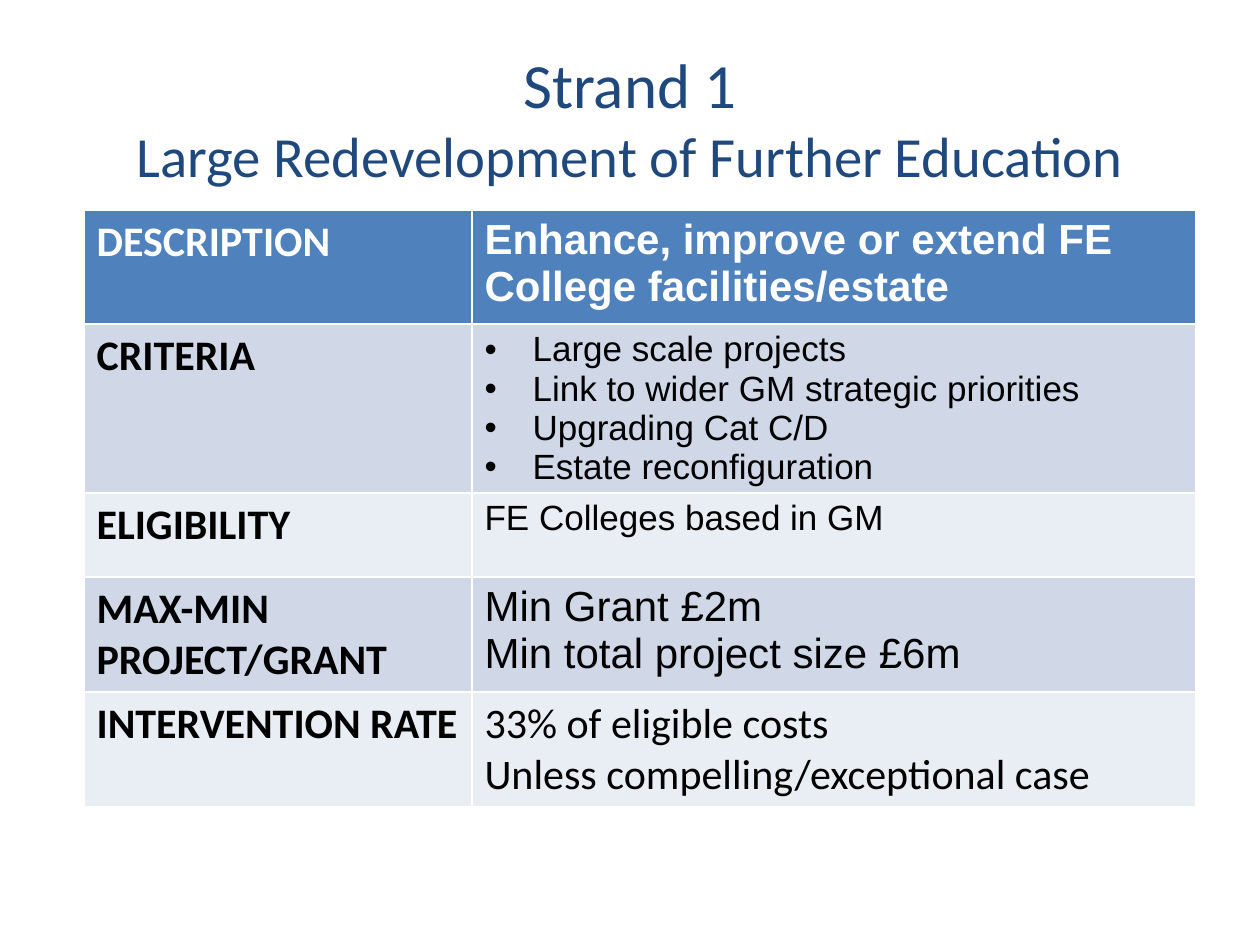
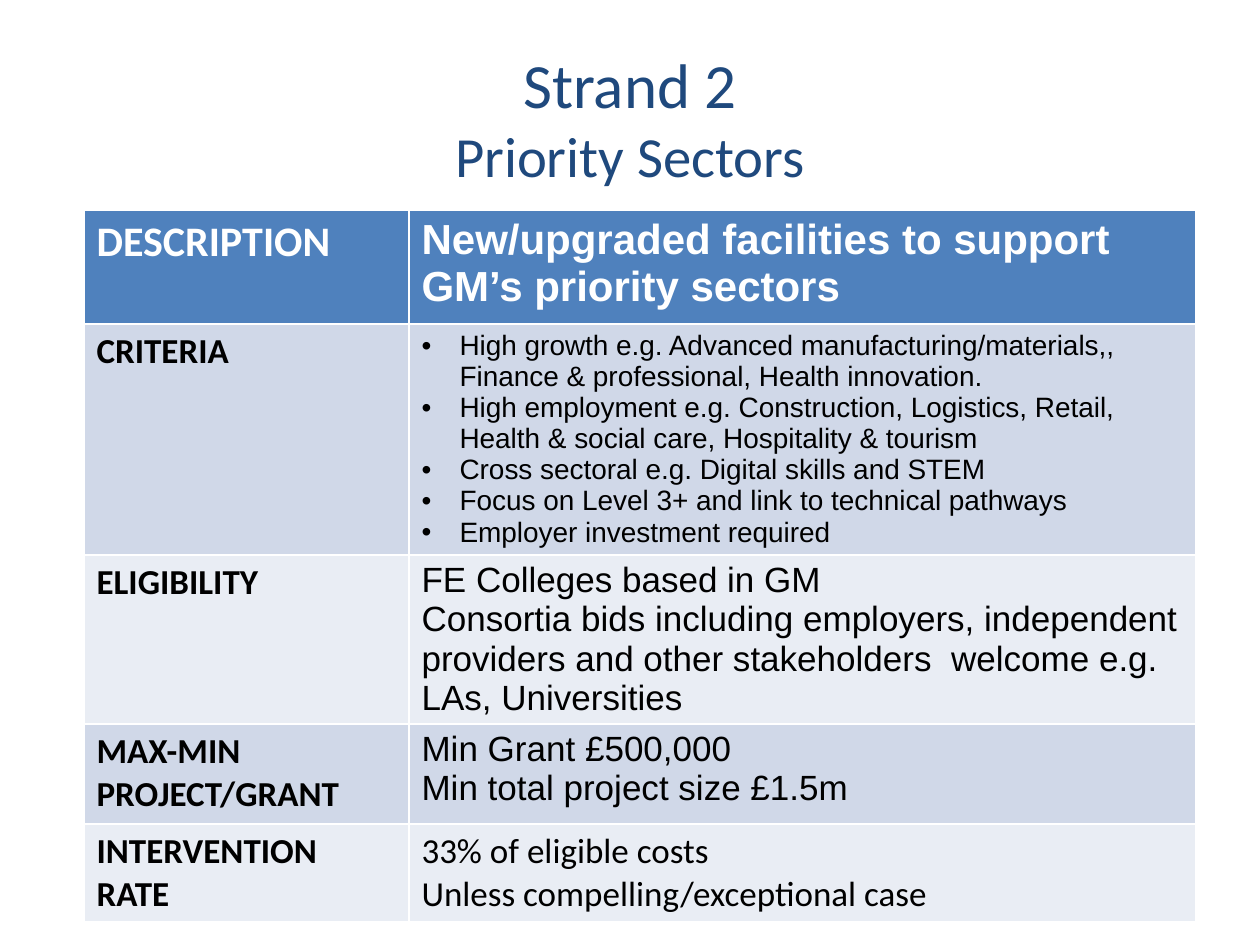
from lxml.etree import SubElement
from pptx import Presentation
from pptx.dml.color import RGBColor
from pptx.enum.text import MSO_ANCHOR, MSO_AUTO_SIZE, PP_ALIGN
from pptx.oxml.ns import qn
from pptx.util import Pt

SCALE = 914400 / 126
NAVY = RGBColor(0x1F, 0x49, 0x7D)
BLUE = RGBColor(0x4F, 0x81, 0xBD)
BANDS = [RGBColor(0xE9, 0xED, 0xF4), RGBColor(0xD0, 0xD8, 0xE8)]
WHITE = RGBColor(0xFF, 0xFF, 0xFF)
BLACK = RGBColor(0, 0, 0)

LABELS = ["DESCRIPTION", "CRITERIA", "ELIGIBILITY",
          "MAX-MIN PROJECT/GRANT", "INTERVENTION RATE"]
RATE = ["33% of eligible costs", "Unless compelling/exceptional case"]

# Each row: height in px, label size, detail size, detail lines
STRANDS = [
    {"title": "Strand 1", "topic": "Large Redevelopment of Further Education",
     "cols": [388, 724], "indent": 48,
     "rows": [
         (114, 24, 24, ["Enhance, improve or extend FE College facilities/estate"]),
         (169, 24, 20, ["Large scale projects",
                        "Link to wider GM strategic priorities",
                        "Upgrading Cat C/D",
                        "Estate reconfiguration"]),
         (84, 24, 20, ["FE Colleges based in GM"]),
         (115, 24, 24, ["Min Grant £2m", "Min total project size £6m"]),
         (114, 24, 24, RATE)]},
    {"title": "Strand 2", "topic": "Priority Sectors",
     "cols": [325, 787], "indent": 38,
     "rows": [
         (114, 24, 24, ["New/upgraded facilities to support GM’s priority sectors"]),
         (231, 20, 16, ["High growth e.g. Advanced manufacturing/materials,, "
                        "Finance & professional, Health innovation.",
                        "High employment e.g. Construction, Logistics, Retail, "
                        "Health & social care, Hospitality & tourism",
                        "Cross sectoral e.g. Digital skills and STEM",
                        "Focus on Level 3+ and link to technical pathways",
                        "Employer investment required"]),
         (169, 20, 20, ["FE Colleges based in GM",
                        "Consortia bids including employers, independent "
                        "providers and other stakeholders  welcome e.g. "
                        "LAs, Universities"]),
         (100, 20, 20, ["Min Grant £500,000", "Min total project size £1.5m"]),
         (98, 20, 20, RATE)]},
]


def px(count):
    return round(count * SCALE)


def add_run(para, text, size, color, face="Calibri", bold=False):
    run = para.add_run()
    run.text = text
    font = run.font
    font.size, font.name, font.bold = Pt(size), face, bold
    font.color.rgb = color


deck = Presentation()
deck.slide_width, deck.slide_height = px(1260), px(945)

for strand in STRANDS:
    slide = deck.slides.add_slide(deck.slide_layouts[5])

    title = slide.shapes.title
    title.left, title.top, title.width, title.height = px(63), px(38), px(1134), px(158)
    frame = title.text_frame
    frame.auto_size = MSO_AUTO_SIZE.NONE
    frame.vertical_anchor = MSO_ANCHOR.MIDDLE
    para = frame.paragraphs[0]
    para.alignment = PP_ALIGN.CENTER
    add_run(para, strand["title"], 36, NAVY)
    para.add_line_break()
    add_run(para, strand["topic"], 32.4, NAVY)

    rows, cols = strand["rows"], strand["cols"]
    high = sum(row[0] for row in rows)
    table = slide.shapes.add_table(len(rows), len(cols), px(84), px(210),
                                   px(sum(cols)), px(high)).table
    for col, width in zip(table.columns, cols):
        col.width = px(width)

    for index, (height, label_size, size, lines) in enumerate(rows):
        table.rows[index].height = px(height)
        head = index == 0
        color = WHITE if head else BLACK
        label, detail = table.rows[index].cells
        for cell in (label, detail):
            cell.fill.solid()
            cell.fill.fore_color.rgb = BLUE if head else BANDS[index % 2]

        add_run(label.text_frame.paragraphs[0], LABELS[index], label_size, color, bold=True)

        face = "Calibri" if lines is RATE else "Arial"
        frame = detail.text_frame
        for order, line in enumerate(lines):
            para = frame.add_paragraph() if order else frame.paragraphs[0]
            add_run(para, line, size, color, face, head)
            if LABELS[index] == "CRITERIA":
                props = para._p.get_or_add_pPr()
                props.set("marL", str(px(strand["indent"])))
                props.set("indent", str(-px(strand["indent"])))
                SubElement(props, qn("a:buFont")).set("typeface", "Arial")
                SubElement(props, qn("a:buChar")).set("char", "•")

deck.save("out.pptx")
